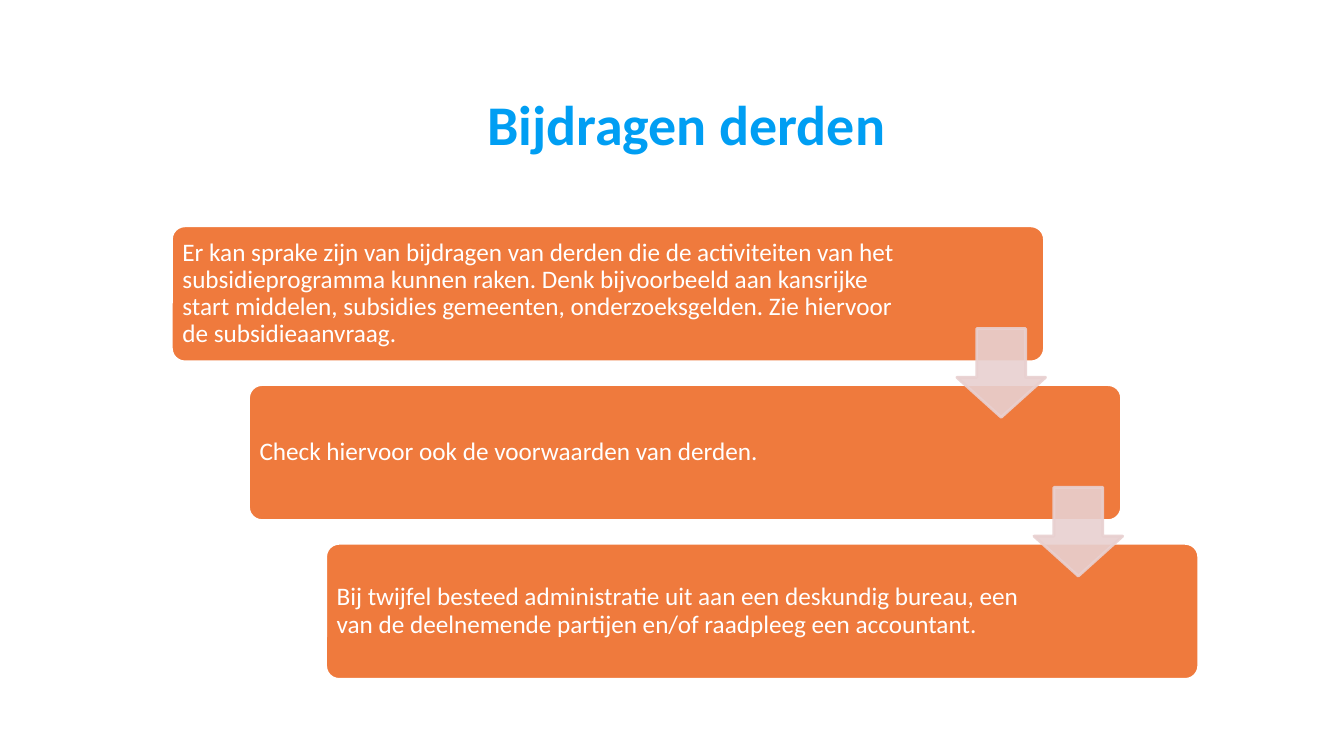
from lxml import etree
from pptx import Presentation
from pptx.dml.color import RGBColor
from pptx.enum.shapes import MSO_SHAPE
from pptx.enum.text import MSO_ANCHOR, PP_ALIGN
from pptx.oxml.ns import qn
from pptx.util import Inches, Pt

ROUND, ARROW = MSO_SHAPE.ROUNDED_RECTANGLE, MSO_SHAPE.DOWN_ARROW
MIDDLE = MSO_ANCHOR.MIDDLE
LEFT, CENTER = PP_ALIGN.LEFT, PP_ALIGN.CENTER
COLORS = {"title": "009EF3", "step": "EF7A3D", "white": "FFFFFF", "arrow": "E8D0D0"}

# Text and right margin of each step
STEPS = [
    ("Er kan sprake zijn van bijdragen van derden die de activiteiten van "
     "het subsidieprogramma kunnen raken. Denk bijvoorbeeld aan kansrijke "
     "start middelen, subsidies gemeenten, onderzoeksgelden. Zie hiervoor "
     "de subsidieaanvraag.", 1.45),
    ("Check hiervoor ook de voorwaarden van derden.", 1.71),
    ("Bij twijfel besteed administratie uit aan een deskundig bureau, een "
     "van de deelnemende partijen en/of raadpleeg een accountant.", 1.71),
]
STEP_X, STEP_Y = 0.765, 1.575


def add_block(kind, box, fill, line):
    block = slide.shapes.add_shape(kind, *map(Inches, box))
    block.shadow.inherit = False
    block.fill.solid()
    block.fill.fore_color.rgb = RGBColor.from_string(COLORS[fill])
    block.line.color.rgb = RGBColor.from_string(COLORS[line])
    block.line.width = Pt(2)
    return block


def set_text(shape, text, size, color, align, margins):
    """Fill a shape with one paragraph; margins run left, top, right, bottom."""
    frame = shape.text_frame
    frame.word_wrap = True
    frame.vertical_anchor = MIDDLE
    (frame.margin_left, frame.margin_top,
     frame.margin_right, frame.margin_bottom) = map(Inches, margins)
    para = frame.paragraphs[0]
    para.text = text
    para.alignment = align
    para.line_spacing = 0.9
    para.font.name = "Calibri"
    para.font.size = Pt(size)
    para.font.color.rgb = RGBColor.from_string(COLORS[color])
    return para


prs = Presentation()
prs.slide_width, prs.slide_height = Inches(13.33), Inches(7.5)
slide = prs.slides.add_slide(prs.slide_layouts[6])

title = slide.shapes.add_textbox(Inches(1.7), Inches(1.05), Inches(10.21), Inches(0.43))
para = set_text(title, "Bijdragen derden", 40, "title", CENTER, (0, 0, 0, 0))
para.font.bold = True

for i, (text, right) in enumerate(STEPS):
    box = (1.7 + i * STEP_X, 2.24 + i * STEP_Y, 8.66, 1.35)
    step = add_block(ROUND, box, "step", "white")
    step.adjustments[0] = 0.1
    set_text(step, text, 18, "white", LEFT, (0.07, 0.07, right, 0.07))

for i in range(len(STEPS) - 1):
    box = (9.49 + i * STEP_X, 3.26 + i * STEP_Y, 0.88, 0.88)
    arrow = add_block(ARROW, box, "arrow", "arrow")
    arrow.adjustments[0], arrow.adjustments[1] = 0.55, 0.45
    for color in arrow._element.spPr.iter(qn("a:srgbClr")):
        etree.SubElement(color, qn("a:alpha"), val="90000")

prs.save("out.pptx")
